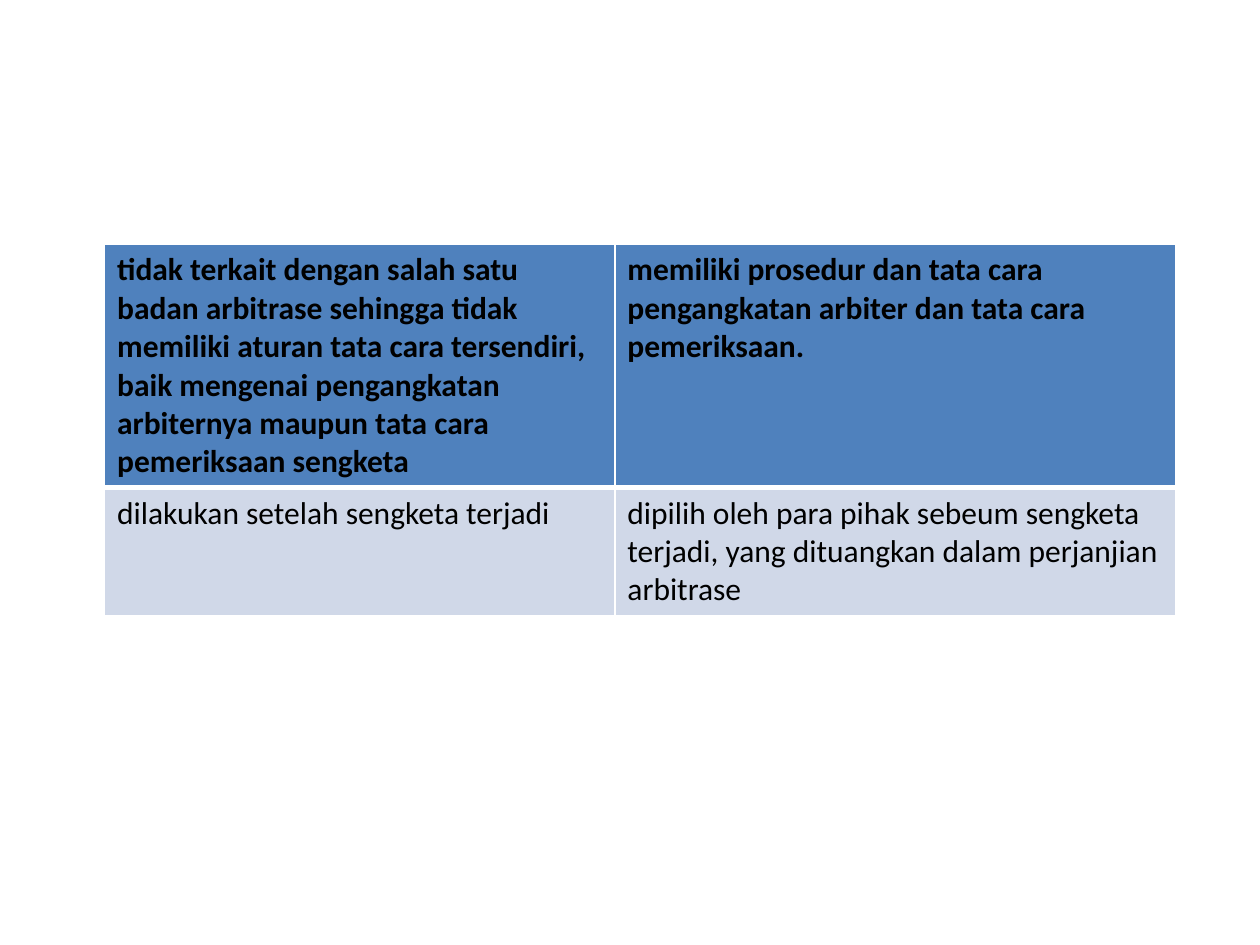
from lxml.etree import SubElement
from pptx import Presentation
from pptx.dml.color import RGBColor
from pptx.oxml.ns import qn
from pptx.util import Inches, Pt

COLORS = {
    "text": "000000",
    "header": "4F81BD",
    "body": "D0D8E8",
    "border": "FFFFFF",
}
THIN, THICK = 1, 3

COLUMN_WIDTHS = [4.05, 4.45]
ROW_HEIGHTS = [1.92, 1.01]
ARBITRATION_ROWS = [
    [
        "tidak terkait dengan salah satu badan arbitrase sehingga tidak memiliki "
        "aturan tata cara tersendiri, baik mengenai pengangkatan arbiternya "
        "maupun tata cara pemeriksaan sengketa",
        "memiliki prosedur dan tata cara\n"
        "pengangkatan arbiter dan tata cara pemeriksaan.",
    ],
    [
        "dilakukan setelah sengketa terjadi",
        "dipilih oleh para pihak sebeum sengketa terjadi, yang dituangkan "
        "dalam perjanjian arbitrase",
    ],
]


class SlideBuilder:
    def __init__(self, slide):
        self.slide = slide
        self.font_format = {"name": "Calibri", "size": Pt(18)}

    def border(self, cell, side, width):
        """Draw one side of a cell; call before filling, as the schema wants lines first."""
        line = SubElement(cell._tc.get_or_add_tcPr(), qn(f"a:ln{side}"), w=str(Pt(width)))
        fill = SubElement(line, qn("a:solidFill"))
        SubElement(fill, qn("a:srgbClr"), val=COLORS["border"])

    def cell(self, cell, text, is_header):
        rule_below_header = "B" if is_header else "T"
        for side in "LRTB":
            self.border(cell, side, THICK if side == rule_below_header else THIN)
        cell.fill.solid()
        cell.fill.fore_color.rgb = RGBColor.from_string(COLORS["header" if is_header else "body"])
        cell.text = text
        for paragraph in cell.text_frame.paragraphs:
            for run in paragraph.runs:
                for attribute, value in {**self.font_format, "bold": is_header}.items():
                    setattr(run.font, attribute, value)
                run.font.color.rgb = RGBColor.from_string(COLORS["text"])

    def table(self, left, top, widths, heights, rows):
        table = self.slide.shapes.add_table(
            len(heights), len(widths), Inches(left), Inches(top),
            Inches(sum(widths)), Inches(sum(heights)),
        ).table
        for column, width in zip(table.columns, widths):
            column.width = Inches(width)
        for row, height in zip(table.rows, heights):
            row.height = Inches(height)
        for row_index, texts in enumerate(rows):
            for column_index, text in enumerate(texts):
                self.cell(table.cell(row_index, column_index), text, row_index == 0)


def main():
    presentation = Presentation()
    presentation.slide_width = Inches(10)
    presentation.slide_height = Inches(7.5)
    builder = SlideBuilder(presentation.slides.add_slide(presentation.slide_layouts[6]))
    builder.table(0.83, 1.94, COLUMN_WIDTHS, ROW_HEIGHTS, ARBITRATION_ROWS)
    presentation.save("out.pptx")


if __name__ == "__main__":
    main()
